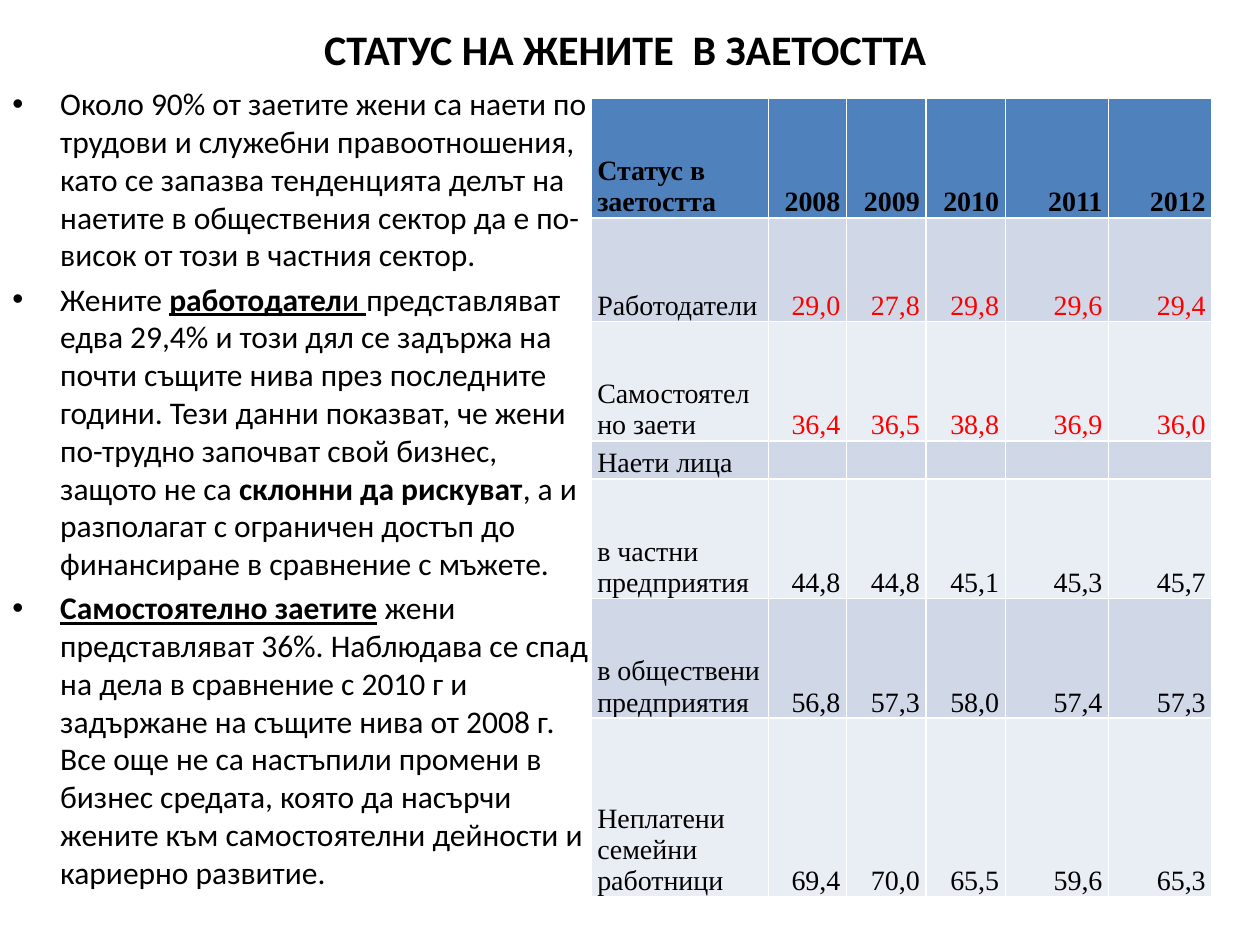
from lxml.etree import SubElement
from pptx import Presentation
from pptx.dml.color import RGBColor
from pptx.enum.text import MSO_ANCHOR, PP_ALIGN
from pptx.oxml.ns import qn
from pptx.util import Inches, Pt

COLORS = {
    "text": "000000",
    "highlight": "FF0000",
    "header": "4F81BD",
    "odd_row": "D0D8E8",
    "even_row": "E9EDF4",
}
BODY_FONT = "Calibri"
TABLE_FONT = "Times New Roman"

TITLE = "СТАТУС НА ЖЕНИТЕ  В ЗАЕТОСТТА "
BULLETS = [
    [("Около 90% от заетите жени са наети по трудови и служебни правоотношения, "
      "като се запазва тенденцията делът на наетите в обществения сектор да е "
      "по-висок от този в частния сектор.", False, False)],
    [("Жените ", False, False),
     ("работодател", True, True),
     ("и ", False, True),
     ("представляват едва 29,4% и този дял се задържа на почти същите нива през "
      "последните години. Тези данни показват, че жени по-трудно започват свой "
      "бизнес, защото не са ", False, False),
     ("склонни да рискуват", True, False),
     (", а и разполагат с ограничен достъп до финансиране в сравнение с мъжете.",
      False, False)],
    [("Самостоятелно заетите", True, True),
     (" ", True, False),
     ("жени представляват 36%. Наблюдава се спад на дела в сравнение с 2010 г и "
      "задържане на същите нива от 2008 г. Все още не са настъпили промени в "
      "бизнес средата, която да насърчи жените към самостоятелни дейности и "
      "кариерно развитие.", False, False)],
]
STATUS_ROWS = [
    ["Статус в заетостта", "2008", "2009", "2010", "2011", "2012"],
    ["Работодатели", "29,0", "27,8", "29,8", "29,6", "29,4"],
    ["Самостоятелно заети", "36,4", "36,5", "38,8", "36,9", "36,0"],
    ["Наети лица", "", "", "", "", ""],
    ["в частни предприятия", "44,8", "44,8", "45,1", "45,3", "45,7"],
    ["в обществени предприятия", "56,8", "57,3", "58,0", "57,4", "57,3"],
    ["Неплатени семейни работници", "69,4", "70,0", "65,5", "59,6", "65,3"],
]
HIGHLIGHTED_ROWS = (1, 2)
COLUMN_WIDTHS = [1.41, 0.62, 0.63, 0.63, 0.82, 0.82]
ROW_HEIGHTS = [0.95, 0.82, 0.95, 0.29, 0.95, 0.95, 1.42]


def box(left, top, width, height):
    return Inches(left), Inches(top), Inches(width), Inches(height)


def add_run(paragraph, text, font, size, color="text", bold=False, underline=False):
    run = paragraph.add_run()
    run.text = text
    run.font.name = font
    run.font.size = Pt(size)
    run.font.bold = bold
    run.font.underline = underline
    run.font.color.rgb = RGBColor.from_string(COLORS[color])


def set_title(slide):
    title = slide.shapes.title
    title.left, title.top, title.width, title.height = box(0.5, 0, 9, 0.78)
    title.text_frame.vertical_anchor = MSO_ANCHOR.MIDDLE
    paragraph = title.text_frame.paragraphs[0]
    paragraph.alignment = PP_ALIGN.CENTER
    add_run(paragraph, TITLE, BODY_FONT, 24, bold=True)


def set_bullet(paragraph):
    properties = paragraph._p.get_or_add_pPr()
    properties.set("marL", str(Inches(0.38)))
    properties.set("indent", str(-Inches(0.38)))
    SubElement(properties, qn("a:buFont"), typeface="Arial")
    SubElement(properties, qn("a:buChar"), char="•")


def add_bullets(slide):
    frame = slide.shapes.add_textbox(*box(0, 0.62, 4.77, 6.56)).text_frame
    frame.word_wrap = True
    for index, runs in enumerate(BULLETS):
        paragraph = frame.add_paragraph() if index else frame.paragraphs[0]
        paragraph.space_before = Pt(3.6)
        set_bullet(paragraph)
        for text, bold, underline in runs:
            add_run(paragraph, text, BODY_FONT, 18, bold=bold, underline=underline)


def fill_cell(cell, text, row, column):
    cell.margin_left = cell.margin_right = Inches(0.05)
    cell.margin_top = cell.margin_bottom = 0
    cell.vertical_anchor = MSO_ANCHOR.BOTTOM
    fill = "header" if row == 0 else "odd_row" if row % 2 else "even_row"
    cell.fill.solid()
    cell.fill.fore_color.rgb = RGBColor.from_string(COLORS[fill])
    paragraph = cell.text_frame.paragraphs[0]
    paragraph.alignment = PP_ALIGN.RIGHT if column else PP_ALIGN.LEFT
    color = "highlight" if column and row in HIGHLIGHTED_ROWS else "text"
    add_run(paragraph, text, TABLE_FONT, 16, color, bold=row == 0)


def add_status_table(slide):
    table = slide.shapes.add_table(
        len(STATUS_ROWS), len(COLUMN_WIDTHS), *box(4.69, 0.78, 4.92, 6.33)
    ).table
    for column, width in zip(table.columns, COLUMN_WIDTHS):
        column.width = Inches(width)
    for row, height in zip(table.rows, ROW_HEIGHTS):
        row.height = Inches(height)
    for row, values in enumerate(STATUS_ROWS):
        for column, text in enumerate(values):
            fill_cell(table.cell(row, column), text, row, column)


def main():
    presentation = Presentation()
    presentation.slide_width = Inches(10)
    presentation.slide_height = Inches(7.5)
    slide = presentation.slides.add_slide(presentation.slide_layouts[5])
    set_title(slide)
    add_bullets(slide)
    add_status_table(slide)
    presentation.save("out.pptx")


if __name__ == "__main__":
    main()
